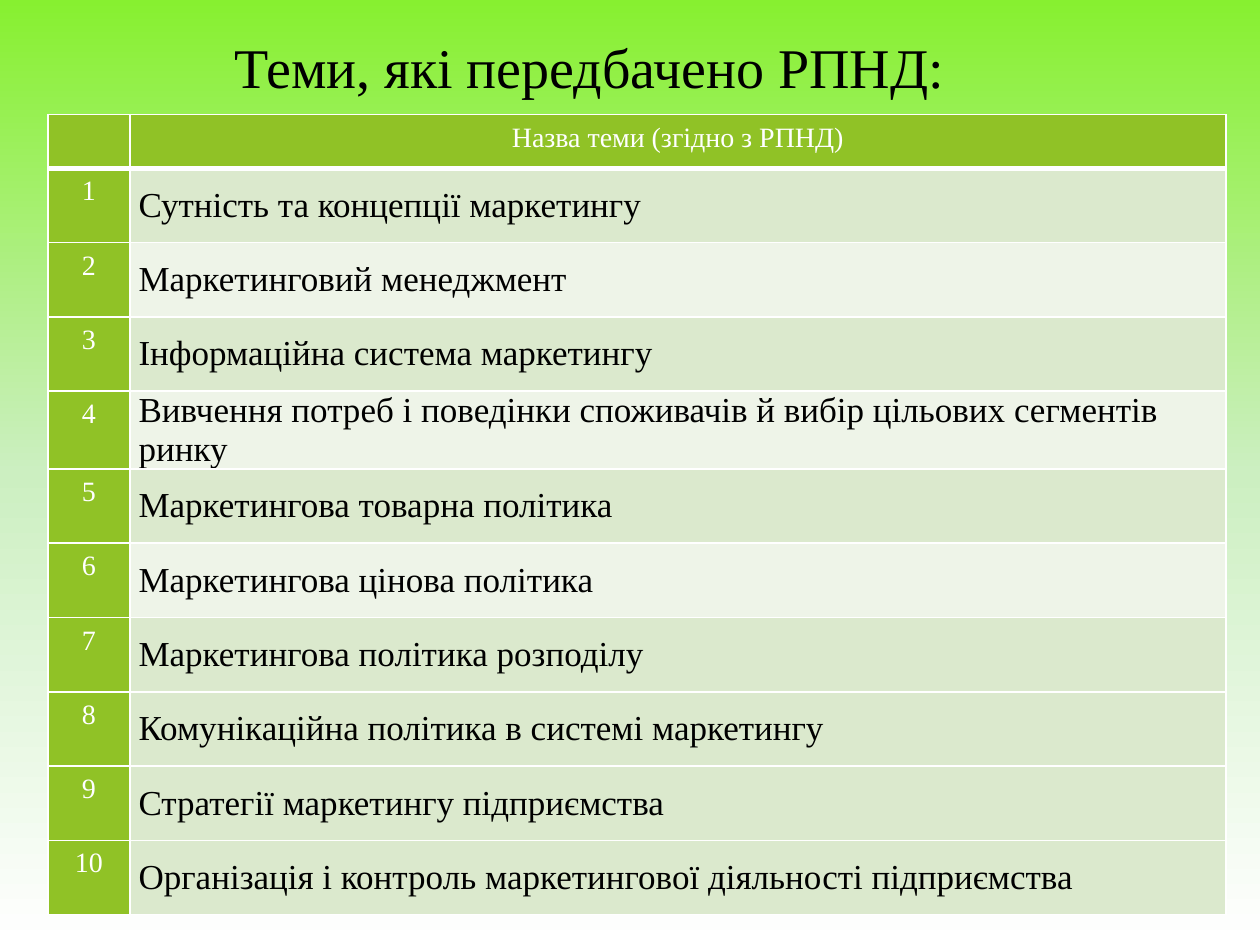
from copy import deepcopy

from lxml import etree
from pptx import Presentation
from pptx.dml.color import RGBColor
from pptx.enum.text import MSO_ANCHOR, PP_ALIGN
from pptx.oxml.ns import qn
from pptx.util import Inches, Pt

FONT = "Times New Roman"
BLACK, WHITE, GREEN = "000000", "FFFFFF", "90C226"
DARK_BAND, LIGHT_BAND = "DBE9CD", "EEF4E8"
BACKGROUND_STOPS = [(0, "87F030"), (0.5, "CCEFC1"), (1, WHITE)]
LIGHT_ROWS = {2, 4, 6}
HEADER = "Назва теми (згідно з РПНД)"
TOPICS = [
    "Сутність та концепції маркетингу",
    "Маркетинговий менеджмент",
    "Інформаційна система маркетингу",
    "Вивчення потреб і поведінки споживачів й вибір цільових сегментів ринку",
    "Маркетингова товарна політика",
    "Маркетингова цінова політика",
    "Маркетингова політика розподілу",
    "Комунікаційна політика в системі маркетингу",
    "Стратегії маркетингу підприємства",
    "Організація і контроль маркетингової діяльності підприємства",
]


def color(value):
    return RGBColor.from_string(value)


def add_run(paragraph, text, size, text_color):
    run = paragraph.add_run()
    run.text = text
    run.font.name = FONT
    run.font.size = Pt(size)
    run.font.bold = False
    run.font.color.rgb = color(text_color)
    return run


def set_background(slide):
    fill = slide.background.fill
    fill.gradient()
    fill.gradient_angle = 270
    stop_list = slide.element.find(".//" + qn("a:gsLst"))
    stop_list.insert(1, deepcopy(stop_list[0]))
    for stop, (position, value) in zip(fill.gradient_stops, BACKGROUND_STOPS):
        stop.position = position
        stop.color.rgb = color(value)


def add_text_shadow(run):
    fill = run.font.fill._xPr.find(qn("a:solidFill"))
    effects = etree.Element(qn("a:effectLst"))
    shadow = etree.SubElement(effects, qn("a:outerShdw"), blurRad="38100",
                              dist="38100", dir="2700000", algn="tl")
    shade = etree.SubElement(shadow, qn("a:srgbClr"), val=BLACK)
    etree.SubElement(shade, qn("a:alpha"), val="43000")
    fill.addnext(effects)


def fill_title(title, left, top, width, height):
    title.left, title.top = Inches(left), Inches(top)
    title.width, title.height = Inches(width), Inches(height)
    title.text_frame.vertical_anchor = MSO_ANCHOR.MIDDLE
    paragraph = title.text_frame.paragraphs[0]
    paragraph.alignment = PP_ALIGN.CENTER
    add_text_shadow(add_run(paragraph, "Теми, які передбачено РПНД:", 32, BLACK))


def set_borders(cell, top=1, bottom=1):
    properties = cell._tc.get_or_add_tcPr()
    sides = [("a:lnL", 1), ("a:lnR", 1), ("a:lnT", top), ("a:lnB", bottom)]
    for index, (side, points) in enumerate(sides):
        line = etree.Element(qn(side), w=str(Pt(points)))
        fill = etree.SubElement(line, qn("a:solidFill"))
        etree.SubElement(fill, qn("a:srgbClr"), val=WHITE)
        properties.insert(index, line)


def format_cell(cell, text, fill, is_topic=False):
    cell.fill.solid()
    cell.fill.fore_color.rgb = color(fill)
    side, edge = (0.07, 0) if is_topic else (0.06, 0.06)
    cell.margin_left = cell.margin_right = Inches(side)
    cell.margin_top = cell.margin_bottom = Inches(edge)
    cell.vertical_anchor = MSO_ANCHOR.MIDDLE if is_topic else MSO_ANCHOR.TOP
    paragraph = cell.text_frame.paragraphs[0]
    paragraph.alignment = PP_ALIGN.LEFT if is_topic else PP_ALIGN.CENTER
    if text:
        add_run(paragraph, text, 20 if is_topic else 16, BLACK if is_topic else WHITE)


def add_topic_table(slide, left, top, width, height):
    frame = slide.shapes.add_table(len(TOPICS) + 1, 2, Inches(left), Inches(top),
                                   Inches(width), Inches(height))
    table = frame.table
    number_width, header_height = 0.65, 0.42
    table.columns[0].width = Inches(number_width)
    table.columns[1].width = Inches(width - number_width)
    table.rows[0].height = Inches(header_height)

    # Header
    for column, text in enumerate(["", HEADER]):
        format_cell(table.cell(0, column), text, GREEN)
        set_borders(table.cell(0, column), bottom=3)

    # Numbered topics
    for number, topic in enumerate(TOPICS, start=1):
        table.rows[number].height = Inches((height - header_height) / len(TOPICS))
        band = LIGHT_BAND if number in LIGHT_ROWS else DARK_BAND
        format_cell(table.cell(number, 0), str(number), GREEN)
        format_cell(table.cell(number, 1), topic, band, is_topic=True)
        for column in range(2):
            set_borders(table.cell(number, column), top=3 if number == 1 else 1)


def main():
    presentation = Presentation()
    presentation.slide_width = Inches(10)
    presentation.slide_height = Inches(7.5)
    slide = presentation.slides.add_slide(presentation.slide_layouts[5])
    set_background(slide)
    fill_title(slide.shapes.title, 0.35, 0.13, 8.66, 0.79)
    add_topic_table(slide, 0.38, 0.91, 9.35, 6.32)
    presentation.save("out.pptx")


if __name__ == "__main__":
    main()
